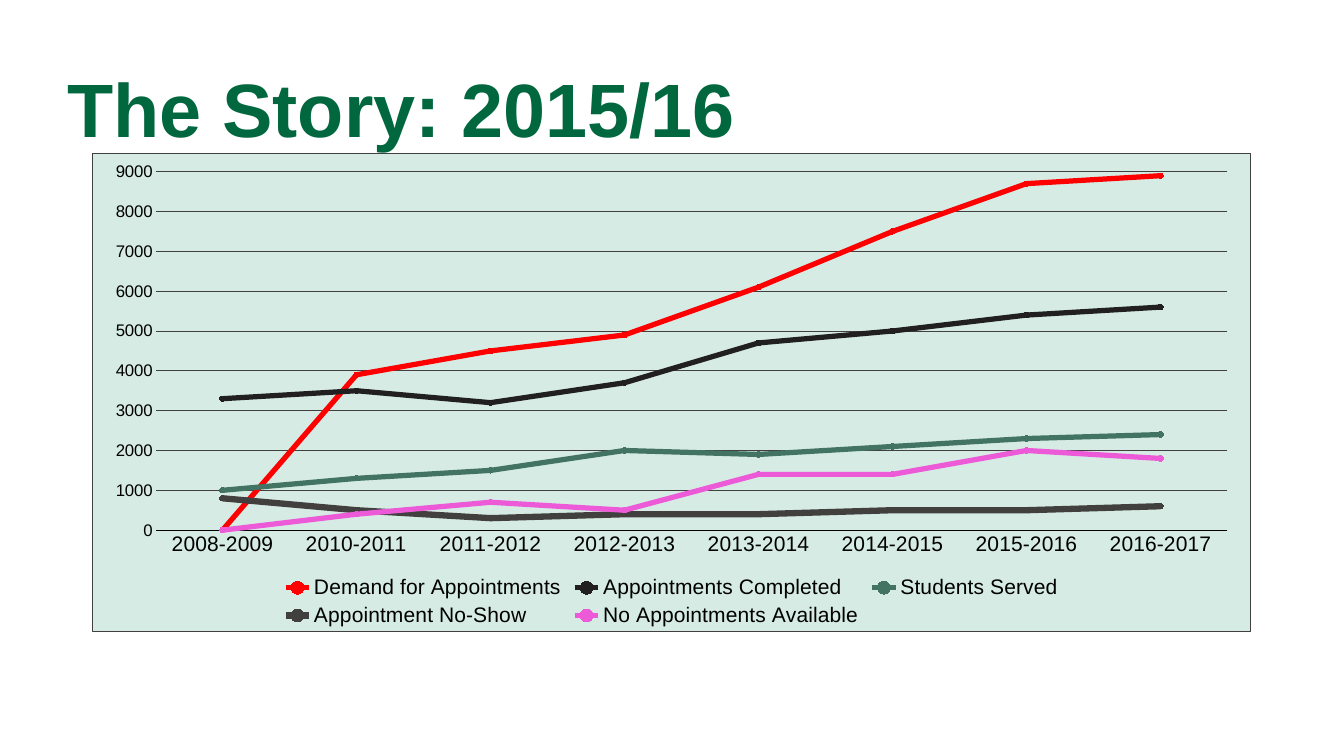
from lxml import etree
from pptx import Presentation
from pptx.chart.data import CategoryChartData
from pptx.dml.color import RGBColor
from pptx.enum.chart import XL_CHART_TYPE, XL_LEGEND_POSITION, XL_MARKER_STYLE, XL_TICK_MARK
from pptx.enum.text import MSO_ANCHOR, MSO_AUTO_SIZE, PP_ALIGN
from pptx.oxml import parse_xml
from pptx.oxml.ns import nsdecls, qn
from pptx.util import Inches, Pt

LINE_MARKERS = XL_CHART_TYPE.LINE_MARKERS
BOTTOM = XL_LEGEND_POSITION.BOTTOM
CIRCLE = XL_MARKER_STYLE.CIRCLE
NO_TICK = XL_TICK_MARK.NONE
MIDDLE = MSO_ANCHOR.MIDDLE
NO_AUTOFIT = MSO_AUTO_SIZE.NONE
LEFT = PP_ALIGN.LEFT

GREEN, MINT, GRAY, BLACK = "00673E", "D5EBE4", "423F3F", "000000"

YEARS = ["2008-2009", "2010-2011", "2011-2012", "2012-2013",
         "2013-2014", "2014-2015", "2015-2016", "2016-2017"]
# name, values, line colour, line width, marker colour
SERIES = [
    ("Demand for Appointments", [None, 3900, 4500, 4900, 6100, 7500, 8700, 8900], "FF0000", 5, "599A83"),
    ("Appointments Completed", [3300, 3500, 3200, 3700, 4700, 5000, 5400, 5600], "211F1F", 5, "A6C8BC"),
    ("Students Served", [1000, 1300, 1500, 2000, 1900, 2100, 2300, 2400], "437362", 5, "408A70"),
    ("Appointment No-Show", [800, 500, 300, 400, 400, 500, 500, 600], GRAY, 6, GRAY),
    ("No Appointments Available", [None, 400, 700, 500, 1400, 1400, 2000, 1800], "EC5AD7", 5, "003E25"),
]


def style_font(font, size, color):
    font.name = "Arial"
    font.size = Pt(size)
    font.color.rgb = RGBColor.from_string(color)


def style_line(line, color, width):
    line.color.rgb = RGBColor.from_string(color)
    line.width = Pt(width)


deck = Presentation()
deck.slide_width, deck.slide_height = Inches(17.78), Inches(10)
slide = deck.slides.add_slide(deck.slide_layouts[5])

# Title
title = slide.shapes.title
title.left, title.top = Inches(0.89), Inches(0.73)
title.width, title.height = Inches(16), Inches(1.6)
frame = title.text_frame
frame.text = "The Story: 2015/16"
frame.word_wrap = True
frame.auto_size = NO_AUTOFIT
frame.vertical_anchor = MIDDLE
frame.margin_left = frame.margin_right = frame.margin_top = frame.margin_bottom = 0
para = frame.paragraphs[0]
para.alignment = LEFT
para.line_spacing = 0.8
span = para.runs[0]
style_font(span.font, 72, GREEN)
span.font.bold = True

# Chart
data = CategoryChartData()
data.categories = YEARS
for name, values, *_ in SERIES:
    data.add_series(name, values)
chart = slide.shapes.add_chart(
    LINE_MARKERS, Inches(1.22), Inches(2.02), Inches(15.33), Inches(6.34), data).chart
style_font(chart.font, 10, GRAY)
chart.has_title = False
chart.has_legend = True
chart.legend.position = BOTTOM
chart.legend.include_in_layout = False
style_font(chart.legend.font, 20, BLACK)
chart.plots[0].vary_by_categories = False

for series, (_, _, color, width, marker_color) in zip(chart.plots[0].series, SERIES):
    series.smooth = False
    style_line(series.format.line, color, width)
    series.marker.style = CIRCLE
    series.marker.size = 5
    series.marker.format.fill.solid()
    series.marker.format.fill.fore_color.rgb = RGBColor.from_string(marker_color)
    series.marker.format.line.fill.background()

# Axes
for axis, size in ((chart.category_axis, 20), (chart.value_axis, 16)):
    axis.major_tick_mark = axis.minor_tick_mark = NO_TICK
    style_font(axis.tick_labels.font, size, BLACK)
style_line(chart.category_axis.format.line, BLACK, 0.75)
value_axis = chart.value_axis
value_axis.minimum_scale, value_axis.maximum_scale, value_axis.major_unit = 0, 9000, 1000
value_axis.format.line.fill.background()
value_axis.has_major_gridlines = True
style_line(value_axis.major_gridlines.format.line, GRAY, 0.75)

# Missing values count as zero
chart_space = chart.element
chart_node = chart_space.find(qn("c:chart"))
blanks = chart_node.find(qn("c:dispBlanksAs"))
if blanks is None:
    blanks = etree.SubElement(chart_node, qn("c:dispBlanksAs"))
blanks.set("val", "zero")

# Chart background and border
chart_node.addnext(parse_xml(
    f'<c:spPr {nsdecls("c", "a")}>'
    f'<a:solidFill><a:srgbClr val="{MINT}"/></a:solidFill>'
    f'<a:ln w="{Pt(0.75)}"><a:solidFill><a:srgbClr val="{GRAY}"/></a:solidFill></a:ln>'
    '</c:spPr>'))

deck.save("out.pptx")
